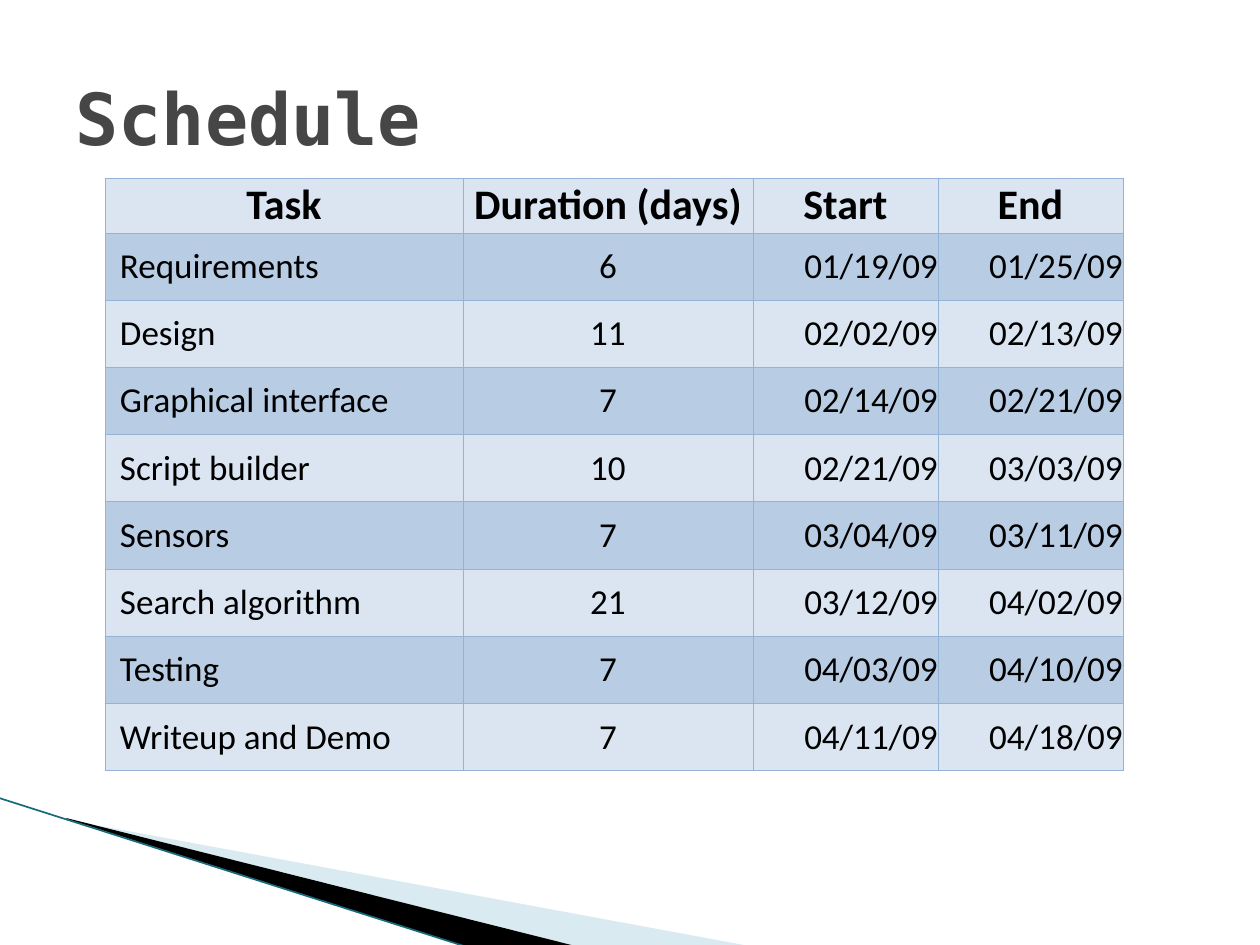
import dataclasses

import pptx
import pptx.dml.color
import pptx.enum.shapes
import pptx.enum.text
import pptx.oxml
import pptx.oxml.ns
import pptx.util

PX = 914400 / 126
ALIGN = pptx.enum.text.PP_ALIGN
MIDDLE = pptx.enum.text.MSO_ANCHOR.MIDDLE

TASKS = [
    ("Task", "Duration (days)", "Start", "End"),
    ("Requirements", "6", "01/19/09", "01/25/09"),
    ("Design", "11", "02/02/09", "02/13/09"),
    ("Graphical interface", "7", "02/14/09", "02/21/09"),
    ("Script builder", "10", "02/21/09", "03/03/09"),
    ("Sensors", "7", "03/04/09", "03/11/09"),
    ("Search algorithm", "21", "03/12/09", "04/02/09"),
    ("Testing", "7", "04/03/09", "04/10/09"),
    ("Writeup and Demo", "7", "04/11/09", "04/18/09"),
]


@dataclasses.dataclass(frozen=True)
class Theme:
    """Colours, fonts and type sizes of the slide."""
    title_font: str = "DejaVu Sans Mono"
    table_font: str = "Calibri"
    title_size: int = 41
    header_size: int = 24
    body_size: int = 20
    title: str = "464646"
    ink: str = "000000"
    bands: tuple = ("DBE5F1", "B8CCE4")
    border: str = "95B3D7"
    border_width: float = 0.5
    pale_wedge: str = "A0CBDC"
    pale_opacity: int = 40
    edge: str = "17697B"
    edge_width: float = 0.95


THEME = Theme()


def emu(px):
    """Turn px into EMU."""
    return pptx.util.Emu(round(px * PX))


def rgb(value):
    """Turn a hex string into a colour."""
    return pptx.dml.color.RGBColor.from_string(value)


def assign(target, values):
    """Set attributes from a dict of format values."""
    for name, value in values.items():
        setattr(target, name, value)


def format_text(paragraph, align, font, size, bold, color):
    """Give a paragraph its alignment and font."""
    paragraph.alignment = align
    assign(paragraph.font, {"name": font, "size": pptx.util.Pt(size), "bold": bold})
    paragraph.font.color.rgb = rgb(color)


def add_wedge(slide, left, top, points, color, opacity=100):
    """Draw one filled wedge from points relative to left and top."""
    start, *rest = [(emu(left + x), emu(top + y)) for x, y in points]
    builder = slide.shapes.build_freeform(*start)
    builder.add_line_segments(rest)
    wedge = builder.convert_to_shape()
    wedge.shadow.inherit = False
    wedge.fill.solid()
    wedge.fill.fore_color.rgb = rgb(color)
    wedge.line.fill.background()
    if opacity < 100:
        tint = wedge.element.spPr.find(".//" + pptx.oxml.ns.qn("a:srgbClr"))
        alpha = pptx.oxml.parse_xml(
            f'<a:alpha {pptx.oxml.ns.nsdecls("a")} val="{opacity * 1000}"/>')
        tint.append(alpha)


def add_corner(slide, left, top, width, height):
    """Draw the corner sweep: two wedges and the edge line."""
    add_wedge(slide, left, top, [(69, 22), (750, 148), (575, 148), (69, 21)],
              THEME.pale_wedge, THEME.pale_opacity)
    add_wedge(slide, left, top, [(67, 20), (576, 148), (469, 149), (68, 21)], THEME.ink)
    edge = slide.shapes.add_connector(
        pptx.enum.shapes.MSO_CONNECTOR.STRAIGHT,
        emu(left), emu(top), emu(left + width), emu(top + height))
    edge.line.color.rgb = rgb(THEME.edge)
    edge.line.width = pptx.util.Pt(THEME.edge_width)
    edge.element.spPr.append(
        pptx.oxml.parse_xml(f'<a:effectLst {pptx.oxml.ns.nsdecls("a")}/>'))


def place_title(slide, left, top, width, height):
    """Fill and place the title in front of the corner sweep."""
    title = slide.shapes.title
    slide.shapes.element.append(title.element)
    assign(title, {"left": emu(left), "top": emu(top),
                   "width": emu(width), "height": emu(height)})
    title.text_frame.text = "Schedule"
    title.text_frame.vertical_anchor = MIDDLE
    format_text(title.text_frame.paragraphs[0], ALIGN.LEFT, THEME.title_font,
                THEME.title_size, True, THEME.title)


def add_borders(cell):
    """Rule all four sides of a cell."""
    properties = cell._tc.get_or_add_tcPr()
    width = pptx.util.Pt(THEME.border_width)
    for side in "LRTB":
        properties.append(pptx.oxml.parse_xml(
            f'<a:ln{side} {pptx.oxml.ns.nsdecls("a")} w="{width}"><a:solidFill>'
            f'<a:srgbClr val="{THEME.border}"/></a:solidFill></a:ln{side}>'))


def add_schedule(slide, left, top, width, height):
    """Add the banded task table."""
    header_height, date_width, duration_width = 55, 185, 290
    task_width = width - duration_width - 2 * date_width
    row_height = (height - header_height) / (len(TASKS) - 1)
    schedule = slide.shapes.add_table(
        len(TASKS), len(TASKS[0]), emu(left), emu(top), emu(width), emu(height)).table
    schedule.horz_banding = False
    widths = (task_width, duration_width, date_width, date_width)
    for column, column_width in zip(schedule.columns, widths):
        column.width = emu(column_width)
    aligns = (ALIGN.LEFT, ALIGN.CENTER, ALIGN.RIGHT, ALIGN.RIGHT)
    for r, task in enumerate(TASKS):
        header = r == 0
        schedule.rows[r].height = emu(header_height if header else row_height)
        for c, value in enumerate(task):
            cell = schedule.cell(r, c)
            indent = 15 if c == 0 and not header else 0
            assign(cell, {"text": value, "vertical_anchor": MIDDLE,
                          "margin_left": emu(indent), "margin_right": 0,
                          "margin_top": 0, "margin_bottom": 0})
            add_borders(cell)
            cell.fill.solid()
            cell.fill.fore_color.rgb = rgb(THEME.bands[r % 2])
            format_text(cell.text_frame.paragraphs[0],
                        ALIGN.CENTER if header else aligns[c], THEME.table_font,
                        THEME.header_size if header else THEME.body_size,
                        header, THEME.ink)


def main():
    """Build and save the schedule slide."""
    deck = pptx.Presentation()
    assign(deck, {"slide_width": emu(1260), "slide_height": emu(945)})
    slide = deck.slides.add_slide(deck.slide_layouts[5])
    add_corner(slide, -1, 798, 468, 149)
    place_title(slide, 63, 38, 1134, 157)
    add_schedule(slide, 105, 178, 1018, 593)
    deck.save("out.pptx")


if __name__ == "__main__":
    main()
